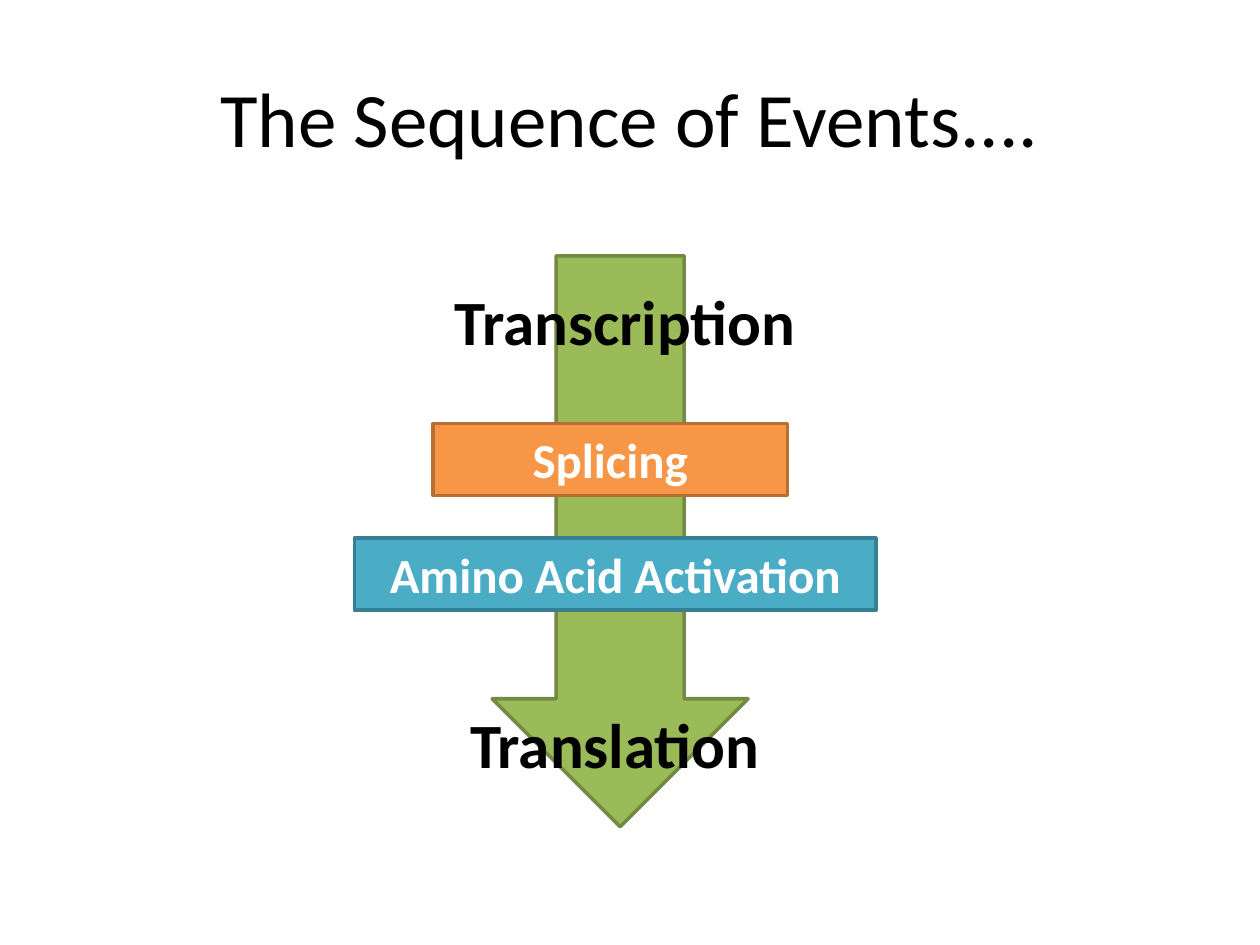
import pptx
import pptx.dml.color
import pptx.enum.shapes
import pptx.enum.text
import pptx.util

Pt = pptx.util.Pt
RGBColor = pptx.dml.color.RGBColor
MSO_SHAPE = pptx.enum.shapes.MSO_SHAPE
MSO_ANCHOR = pptx.enum.text.MSO_ANCHOR

BLACK = RGBColor(0x00, 0x00, 0x00)
WHITE = RGBColor(0xFF, 0xFF, 0xFF)
GREEN = RGBColor(0x9B, 0xBB, 0x59)
DARK_GREEN = RGBColor(0x73, 0x8A, 0x42)
ORANGE = RGBColor(0xF7, 0x96, 0x46)
DARK_ORANGE = RGBColor(0xB7, 0x6F, 0x34)
TEAL = RGBColor(0x4B, 0xAC, 0xC6)
DARK_TEAL = RGBColor(0x37, 0x7F, 0x92)


def write(frame, wording, size, color, bold=True, anchor=MSO_ANCHOR.TOP):
    frame.word_wrap = True
    frame.vertical_anchor = anchor
    line = frame.paragraphs[0]
    line.text = wording
    line.alignment = pptx.enum.text.PP_ALIGN.CENTER
    line.font.name = "Calibri"
    line.font.size = Pt(size)
    line.font.bold = bold
    line.font.color.rgb = color


def add_label(slide, wording, box, size=36, **style):
    label = slide.shapes.add_textbox(*map(Pt, box))
    write(label.text_frame, wording, size, BLACK, **style)


def add_block(slide, outline, box, fill, edge):
    block = slide.shapes.add_shape(outline, *map(Pt, box))
    block.shadow.inherit = False
    block.fill.solid()
    block.fill.fore_color.rgb = fill
    block.line.color.rgb = edge
    block.line.width = Pt(2)
    return block


def add_step(slide, wording, box, fill, edge):
    step = add_block(slide, MSO_SHAPE.RECTANGLE, box, fill, edge)
    write(step.text_frame, wording, 28, WHITE)


def main():
    """Build the slide showing the steps from transcription to translation."""
    deck = pptx.Presentation()
    deck.slide_width, deck.slide_height = Pt(720), Pt(540)
    slide = deck.slides.add_slide(deck.slide_layouts[6])

    add_block(slide, MSO_SHAPE.DOWN_ARROW, (281.3, 146.2, 146.2, 326.2), GREEN, DARK_GREEN)
    add_label(slide, "The Sequence of Events....", (36, 21.6, 648, 90),
              size=44, bold=False, anchor=MSO_ANCHOR.MIDDLE)
    add_label(slide, "Transcription", (112.3, 157.7, 489.6, 51))
    add_label(slide, "Translation", (112.3, 399.6, 478, 51))
    add_step(slide, "Splicing", (247.5, 242, 202.5, 41.2), ORANGE, DARK_ORANGE)
    add_step(slide, "Amino Acid Activation", (202.5, 307.5, 298, 41.2), TEAL, DARK_TEAL)

    deck.save("out.pptx")


if __name__ == "__main__":
    main()
